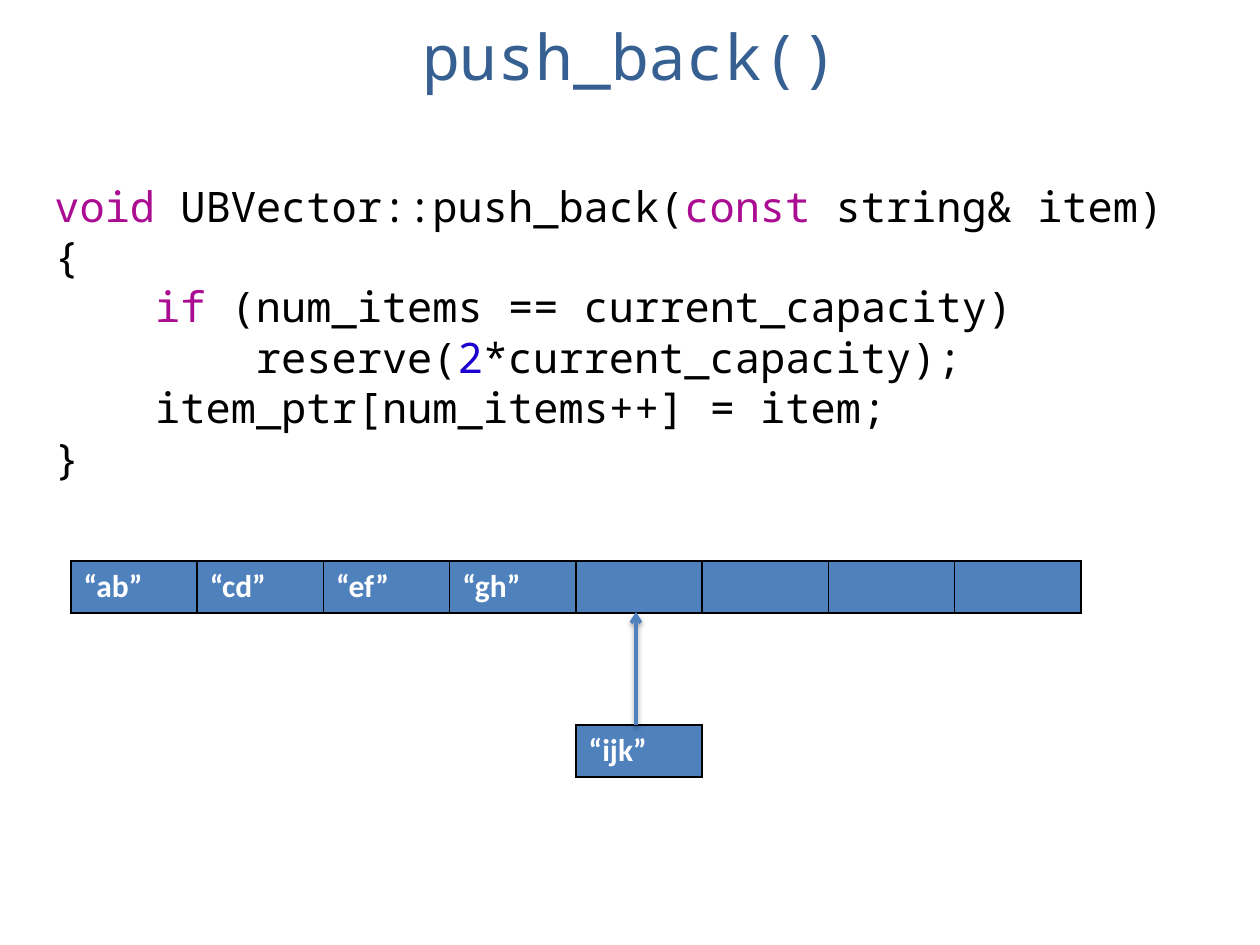
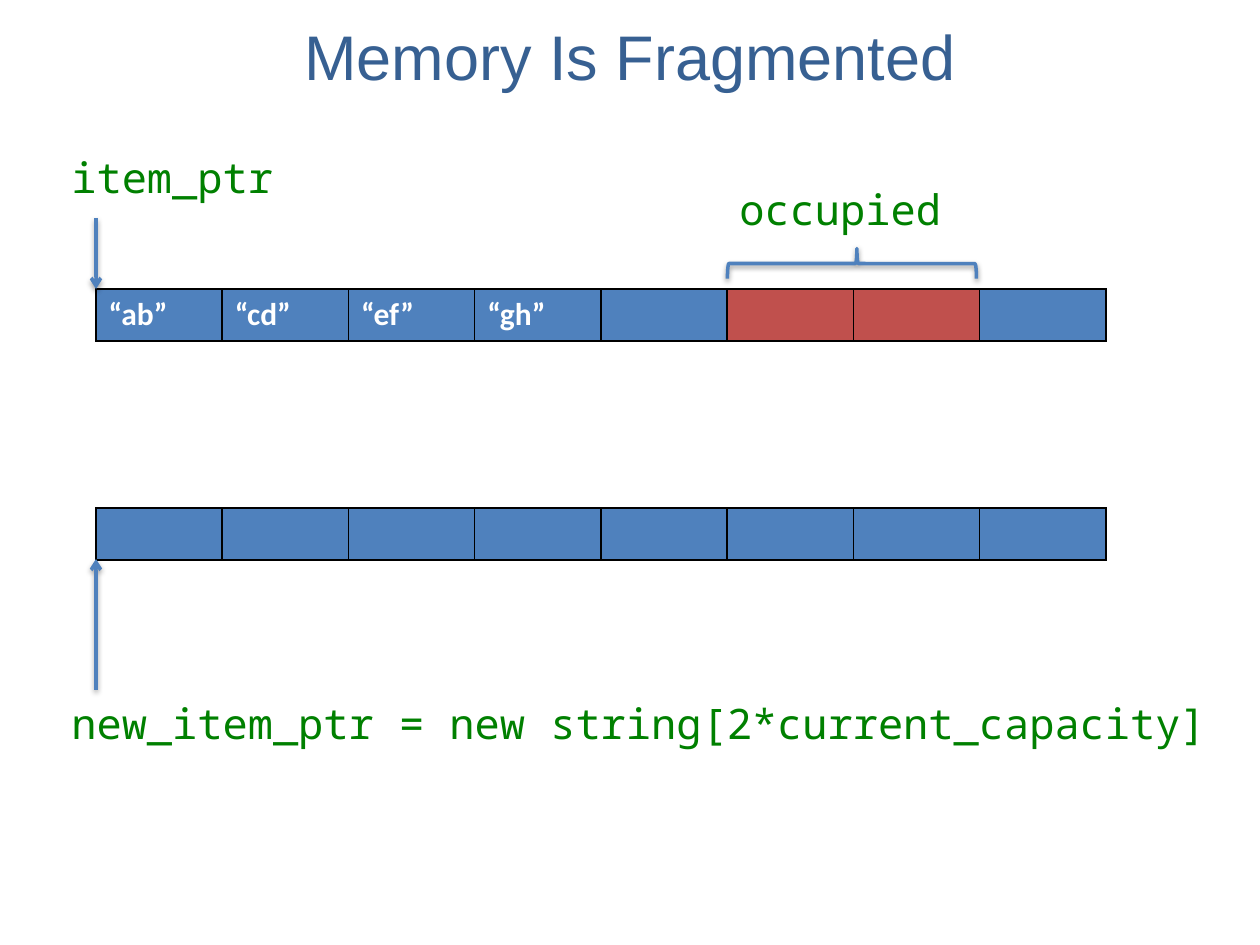
from lxml.etree import SubElement
from pptx import Presentation
from pptx.dml.color import RGBColor
from pptx.enum.shapes import MSO_CONNECTOR, MSO_SHAPE
from pptx.enum.text import MSO_ANCHOR, MSO_AUTO_SIZE, PP_ALIGN
from pptx.oxml import parse_xml
from pptx.oxml.ns import nsdecls, qn
from pptx.util import Pt

PX = 914400 / 126
SLIDE_W, SLIDE_H = 1260, 945
MONO, SANS, CELL_FONT = "Noto Sans Mono", "Arial", "Calibri"
BLUE, RED, BLACK, WHITE = "4F81BD", "C0504D", "000000", "FFFFFF"
TITLE, LABEL, KEYWORD, NUMBER = "376092", "008000", "AA0D91", "1C00CF"
BLOCK_W, CELL_W, ROW_H = 505, 126, 52
CODE_INDENT = 57.6

CODE = [
    (0, [("void", KEYWORD), (" UBVector::push_back(", BLACK),
         ("const", KEYWORD), (" string& item) {", BLACK)]),
    (1, [("if", KEYWORD), (" (num_items == current_capacity)", BLACK)]),
    (2, [("reserve(", BLACK), ("2", NUMBER), ("*current_capacity);", BLACK)]),
    (1, [("item_ptr[num_items++] = item;", BLACK)]),
    (0, [("}", BLACK)]),
]
STORED = ["“ab”", "“cd”", "“ef”", "“gh”"]
FREE = [""] * 4
ALL_BLUE = [BLUE] * 4
OCCUPIED = [BLUE, RED, RED, BLUE]

SLIDES = [
    {
        "title": ("push_back()", MONO),
        "code": (42, 174, 1169, 318),
        "memory": [(71, 561, BLOCK_W, STORED, ALL_BLUE),
                   (576, 561, BLOCK_W, FREE, ALL_BLUE),
                   (576, 725, CELL_W, ["“ijk”"], [BLUE])],
        "arrows": [(636, 725, 612)],
    },
    {
        "title": ("Memory Is Fragmented", SANS),
        "memory": [(96, 289, BLOCK_W, STORED, ALL_BLUE),
                   (601, 289, BLOCK_W, FREE, OCCUPIED),
                   (96, 508, BLOCK_W, FREE, ALL_BLUE),
                   (601, 508, BLOCK_W, FREE, ALL_BLUE)],
        "arrows": [(96, 218, 289), (96, 690, 559)],
        "labels": [("item_ptr", 59, 145, 229),
                   ("new_item_ptr = new string[2*current_capacity]", 59, 691, 1171),
                   ("occupied", 727, 177, 229)],
        "brace": (837, 139, 30, 249),
    },
]


def emu(*lengths):
    return [round(length * PX) for length in lengths]


def color(value):
    return RGBColor.from_string(value)


def style_font(font, name, size, value=None):
    font.name, font.size = name, Pt(size)
    if value:
        font.color.rgb = color(value)


def add_text(slide, text, box, name, size, value):
    frame = slide.shapes.add_textbox(*emu(*box)).text_frame
    paragraph = frame.paragraphs[0]
    paragraph.text = text
    style_font(paragraph.font, name, size, value)
    return frame


def add_title(slide, text, name):
    frame = add_text(slide, text, (0, 9, SLIDE_W, 92), name, 36, TITLE)
    frame.word_wrap = True
    frame.vertical_anchor = MSO_ANCHOR.MIDDLE
    frame.paragraphs[0].alignment = PP_ALIGN.CENTER


def add_label(slide, text, left, top, width):
    frame = add_text(slide, text, (left, top, width, 63), MONO, 24, LABEL)
    frame.word_wrap = False
    frame.auto_size = MSO_AUTO_SIZE.SHAPE_TO_FIT_TEXT


def add_code(slide, box):
    frame = slide.shapes.add_textbox(*emu(*box)).text_frame
    frame.word_wrap = True
    frame.auto_size = MSO_AUTO_SIZE.SHAPE_TO_FIT_TEXT
    for number, (level, parts) in enumerate(CODE):
        line = frame.add_paragraph() if number else frame.paragraphs[0]
        style_font(line.font, MONO, 24)
        properties = line._p.get_or_add_pPr()
        properties.set("marL", str(Pt(level * CODE_INDENT)))
        properties.set("indent", "0")
        for text, value in parts:
            run = line.add_run()
            run.text = text
            run.font.color.rgb = color(value)


def add_borders(cell):
    properties = cell._tc.get_or_add_tcPr()
    for side in ("lnL", "lnR", "lnT", "lnB"):
        border = SubElement(properties, qn(f"a:{side}"), w=str(Pt(1)))
        fill = SubElement(border, qn("a:solidFill"))
        SubElement(fill, qn("a:srgbClr"), val=BLACK)


def add_memory(slide, left, top, width, items, fills):
    table = slide.shapes.add_table(1, len(items), *emu(left, top, width, ROW_H)).table
    table.first_row = table.horz_banding = False
    for column, item, fill in zip(range(len(items)), items, fills):
        table.columns[column].width = emu(width / len(items))[0]
        cell = table.cell(0, column)
        add_borders(cell)
        cell.fill.solid()
        cell.fill.fore_color.rgb = color(fill)
        paragraph = cell.text_frame.paragraphs[0]
        paragraph.text = item
        style_font(paragraph.font, CELL_FONT, 18, WHITE)
        paragraph.font.bold = True


def style_line(part):
    part.line.color.rgb = color(BLUE)
    part.line.width = Pt(2)
    part._element.spPr.append(parse_xml(
        f'<a:effectLst {nsdecls("a")}><a:outerShdw blurRad="40000" dist="20000" '
        f'dir="5400000" rotWithShape="0"><a:srgbClr val="{BLACK}">'
        '<a:alpha val="38000"/></a:srgbClr></a:outerShdw></a:effectLst>'))


def add_arrow(slide, x, start, end):
    arrow = slide.shapes.add_connector(MSO_CONNECTOR.STRAIGHT, *emu(x, start, x, end))
    style_line(arrow)
    SubElement(arrow.line._get_or_add_ln(), qn("a:tailEnd"), type="arrow")


def add_brace(slide, box):
    brace = slide.shapes.add_shape(MSO_SHAPE.LEFT_BRACE, *emu(*box))
    brace.adjustments[0], brace.adjustments[1] = 0.05, 0.52
    brace.rotation = 90
    brace._element.spPr.find(qn("a:xfrm")).set("flipV", "1")
    brace.fill.background()
    style_line(brace)


def main():
    deck = Presentation()
    deck.slide_width, deck.slide_height = emu(SLIDE_W, SLIDE_H)
    for content in SLIDES:
        slide = deck.slides.add_slide(deck.slide_layouts[6])
        add_title(slide, *content["title"])
        if "code" in content:
            add_code(slide, content["code"])
        for block in content["memory"]:
            add_memory(slide, *block)
        for arrow in content["arrows"]:
            add_arrow(slide, *arrow)
        for label in content.get("labels", []):
            add_label(slide, *label)
        if "brace" in content:
            add_brace(slide, content["brace"])
    deck.save("out.pptx")


if __name__ == "__main__":
    main()
